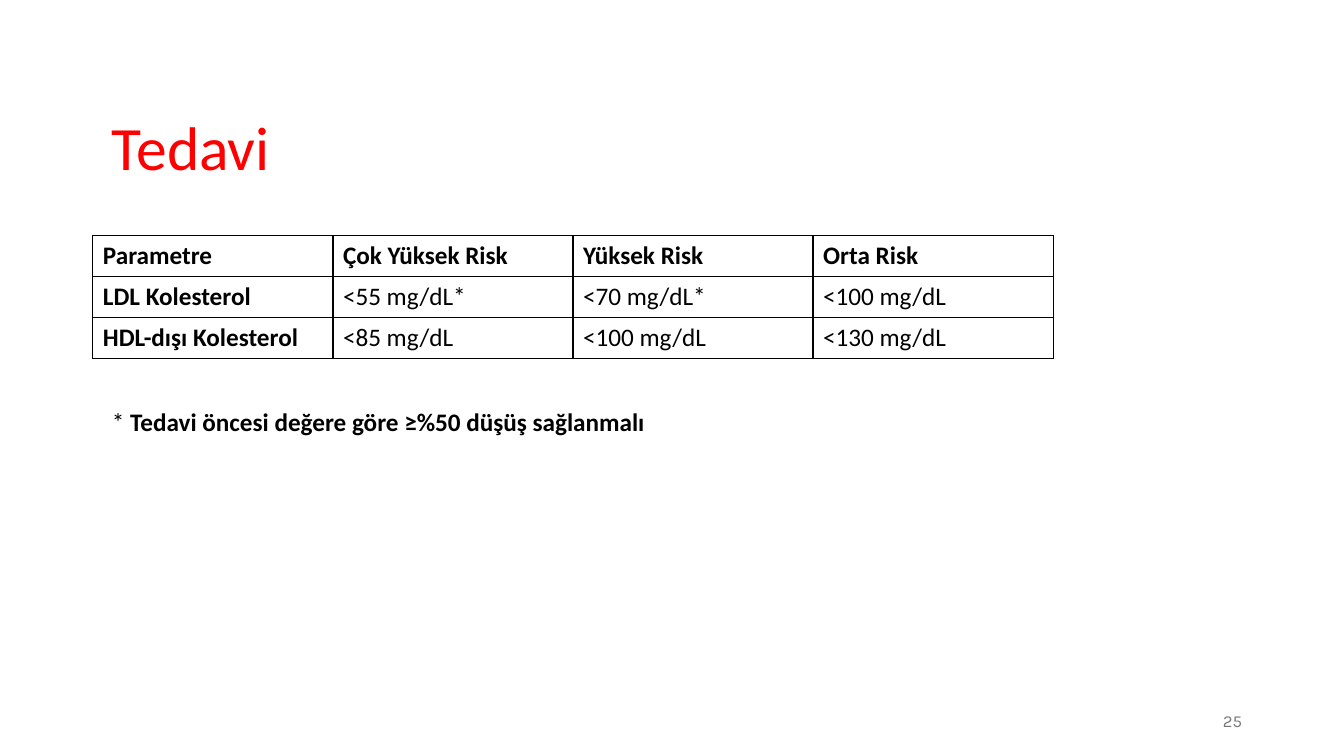
from lxml.etree import SubElement
from pptx import Presentation
from pptx.dml.color import RGBColor
from pptx.enum.text import MSO_ANCHOR, PP_ALIGN
from pptx.oxml.ns import qn
from pptx.util import Cm, Pt

BLACK = "000000"
TARGETS = [
    ["Parametre", "Çok Yüksek Risk", "Yüksek Risk", "Orta Risk"],
    ["LDL Kolesterol", "<55 mg/dL*", "<70 mg/dL*", "<100 mg/dL"],
    ["HDL-dışı Kolesterol", "<85 mg/dL", "<100 mg/dL", "<130 mg/dL"],
]


def color(value):
    """Turn a hex string into a colour."""
    return RGBColor.from_string(value)


def add_run(paragraph, text, size=18, fill=BLACK, bold=False, font="Calibri"):
    """Add one formatted run to a paragraph."""
    run = paragraph.add_run()
    run.text = text
    run.font.name = font
    run.font.size = Pt(size)
    run.font.bold = bold
    run.font.color.rgb = color(fill)


def add_text_box(slide, left, top, width, height, anchor=MSO_ANCHOR.MIDDLE):
    """Add a wrapping text box and return its first paragraph."""
    shape = slide.shapes.add_textbox(Cm(left), Cm(top), Cm(width), Cm(height))
    shape.text_frame.word_wrap = True
    shape.text_frame.vertical_anchor = anchor
    return shape.text_frame.paragraphs[0]


def add_borders(cell, line_color, width):
    """Draw a solid line on all four sides of a cell."""
    properties = cell._tc.get_or_add_tcPr()
    for side in ("lnL", "lnR", "lnT", "lnB"):
        line = SubElement(properties, qn(f"a:{side}"), w=str(Pt(width)))
        fill = SubElement(line, qn("a:solidFill"))
        SubElement(fill, qn("a:srgbClr"), val=line_color)


def add_grid(slide, rows, left, top, column_width, row_height):
    """Add a bordered table with a bold first row and first column."""
    width, height = column_width * len(rows[0]), row_height * len(rows)
    table = slide.shapes.add_table(
        len(rows), len(rows[0]), Cm(left), Cm(top), Cm(width), Cm(height)
    ).table
    for row_index, row in enumerate(rows):
        for column_index, text in enumerate(row):
            cell = table.cell(row_index, column_index)
            add_borders(cell, BLACK, 1)
            cell.fill.background()
            cell.vertical_anchor = MSO_ANCHOR.MIDDLE
            heading = row_index == 0 or column_index == 0
            add_run(cell.text_frame.paragraphs[0], text, bold=heading)


def main():
    """Build and save the treatment slide."""
    presentation = Presentation()
    presentation.slide_width, presentation.slide_height = Cm(33.87), Cm(19.05)
    slide = presentation.slides.add_slide(presentation.slide_layouts[6])

    title = add_text_box(slide, 2.57, 1.96, 28.98, 3.68)
    title.line_spacing = 0.9
    add_run(title, "Tedavi", size=44, fill="FF0000")

    number = add_text_box(slide, 23.93, 17.65, 7.62, 1.02)
    number.alignment = PP_ALIGN.RIGHT
    add_run(number, "25", size=12, fill="797979", font="Karla")

    add_grid(slide, TARGETS, 2.34, 5.94, 6.05, 1.03)

    note = add_text_box(slide, 2.57, 10.11, 16.94, 1.02, MSO_ANCHOR.TOP)
    add_run(note, "* ")
    add_run(note, "Tedavi öncesi değere göre ≥%50 düşüş sağlanmalı", bold=True)

    presentation.save("out.pptx")


if __name__ == "__main__":
    main()
